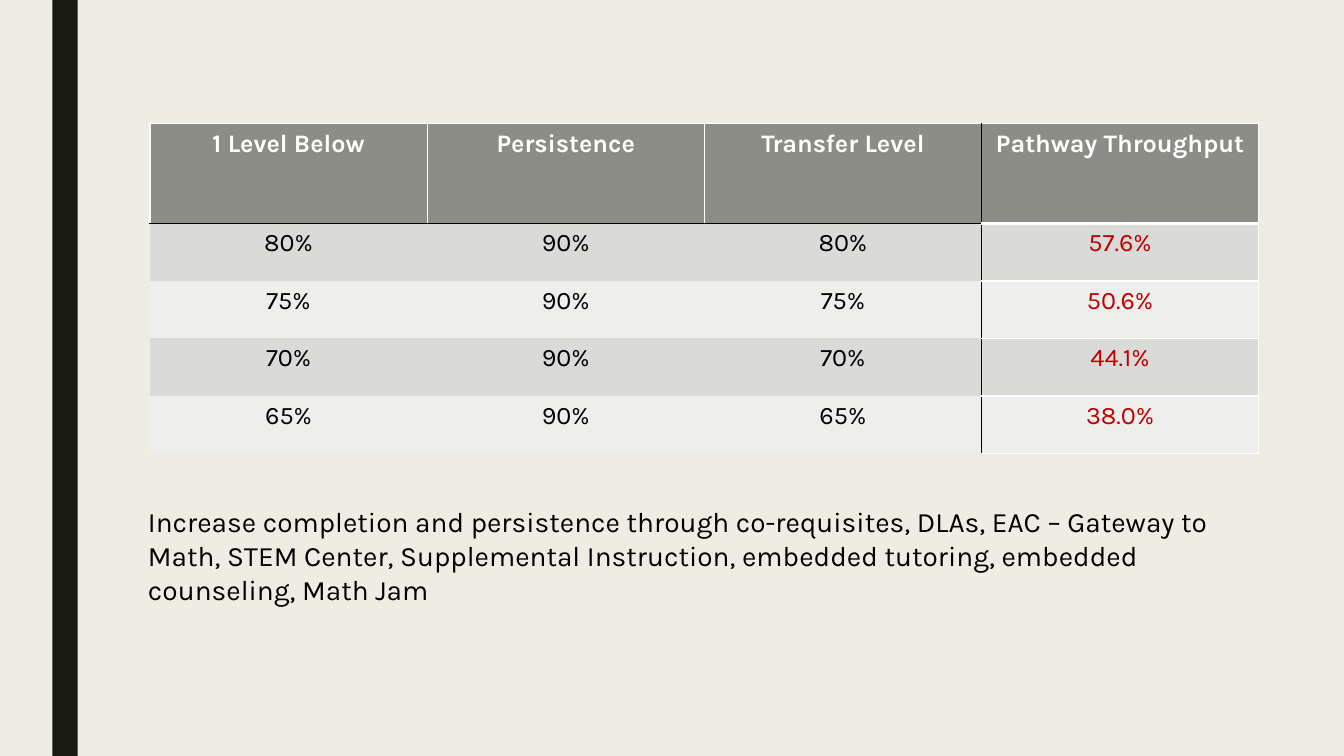
from lxml.etree import SubElement
from pptx import Presentation
from pptx.dml.color import RGBColor
from pptx.enum.shapes import MSO_SHAPE
from pptx.enum.text import MSO_AUTO_SIZE, PP_ALIGN
from pptx.oxml.ns import qn
from pptx.util import Cm, Pt

FONT = "Karla"
CREAM = RGBColor(0xEF, 0xED, 0xE3)
DARK_OLIVE = RGBColor(0x19, 0x1B, 0x0E)
HEADER_GRAY = RGBColor(0x8C, 0x8D, 0x86)
BAND_DARK = RGBColor(0xDA, 0xDB, 0xD9)
BAND_LIGHT = RGBColor(0xEE, 0xEE, 0xED)
RED = RGBColor(0xC0, 0x00, 0x00)
BLACK = RGBColor(0x00, 0x00, 0x00)
WHITE = RGBColor(0xFF, 0xFF, 0xFF)

RATES = [
    ["1 Level Below", "Persistence", "Transfer Level", "Pathway Throughput"],
    ["80%", "90%", "80%", "57.6%"],
    ["75%", "90%", "75%", "50.6%"],
    ["70%", "90%", "70%", "44.1%"],
    ["65%", "90%", "65%", "38.0%"],
]
THROUGHPUT = len(RATES[0]) - 1
ACTIONS = (
    "Increase completion and persistence through co-requisites, DLAs, "
    "EAC – Gateway to Math, STEM Center, Supplemental Instruction, "
    "embedded tutoring, embedded counseling, Math Jam"
)


def add_run(paragraph, text, size, color, bold=False):
    run = paragraph.add_run()
    run.text = text
    run.font.name = FONT
    run.font.size = Pt(size)
    run.font.bold = bold
    run.font.color.rgb = color


def add_side_bar(slide, height):
    bar = slide.shapes.add_shape(MSO_SHAPE.RECTANGLE, Cm(1.32), 0, Cm(0.64), height)
    bar.shadow.inherit = False
    bar.fill.solid()
    bar.fill.fore_color.rgb = DARK_OLIVE
    bar.line.fill.background()


def cell_borders(row, col):
    """Return (colour, points), or None, for each side of a cell."""
    header, throughput = row == 0, col == THROUGHPUT
    white = (WHITE, 1) if header or throughput else None
    black = (BLACK, 1)
    rule = (WHITE, 3) if throughput else black  # line under the header
    return {
        "L": black if throughput else white,
        "R": black if col == THROUGHPUT - 1 else white,
        "T": rule if row == 1 else white,
        "B": rule if header else white,
    }


def set_borders(cell, borders):
    properties = cell._tc.get_or_add_tcPr()
    for side, border in borders.items():
        line = SubElement(properties, qn(f"a:ln{side}"))
        if border is None:
            SubElement(line, qn("a:noFill"))
            continue
        color, points = border
        line.set("w", str(Pt(points)))
        fill = SubElement(line, qn("a:solidFill"))
        SubElement(fill, qn("a:srgbClr")).set("val", str(color))


def fill_cell(cell, text, row, col):
    header = row == 0
    set_borders(cell, cell_borders(row, col))
    cell.fill.solid()
    band = BAND_DARK if row % 2 else BAND_LIGHT
    cell.fill.fore_color.rgb = HEADER_GRAY if header else band
    paragraph = cell.text_frame.paragraphs[0]
    paragraph.alignment = PP_ALIGN.CENTER
    body_color = RED if col == THROUGHPUT else BLACK
    add_run(paragraph, text, 18, WHITE if header else body_color, bold=header)


def add_rates_table(slide):
    rates = slide.shapes.add_table(
        len(RATES), len(RATES[0]), Cm(3.78), Cm(3.12), Cm(27.94), Cm(8.31)
    ).table
    for column in rates.columns:
        column.width = Cm(6.985)
    for row, values in enumerate(RATES):
        rates.rows[row].height = Cm(1.45 if row else 2.51)
        for col, text in enumerate(values):
            fill_cell(rates.cell(row, col), text, row, col)


def add_actions(slide):
    actions = slide.shapes.add_textbox(Cm(3.48), Cm(12.6), Cm(28.52), Cm(1.96))
    frame = actions.text_frame
    frame.word_wrap = True
    frame.auto_size = MSO_AUTO_SIZE.SHAPE_TO_FIT_TEXT
    add_run(frame.paragraphs[0], ACTIONS, 20, BLACK)


def main():
    deck = Presentation()
    deck.slide_width, deck.slide_height = Cm(33.87), Cm(19.05)
    slide = deck.slides.add_slide(deck.slide_layouts[6])  # blank: no title here

    # Background and side bar
    slide.background.fill.solid()
    slide.background.fill.fore_color.rgb = CREAM
    add_side_bar(slide, deck.slide_height)

    # Throughput rates and the actions to raise them
    add_rates_table(slide)
    add_actions(slide)
    deck.save("out.pptx")


if __name__ == "__main__":
    main()
